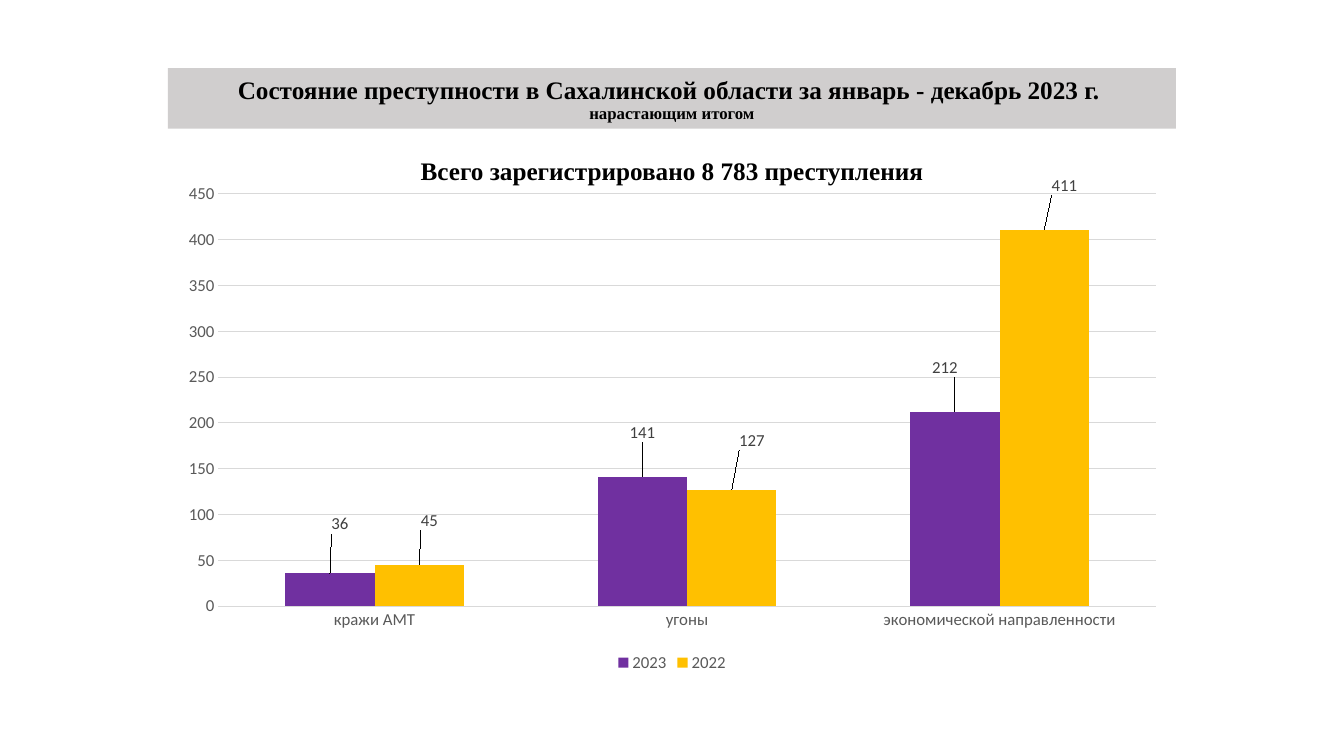
import pptx
import pptx.util
import pptx.chart.data
import pptx.dml.color
import pptx.enum.chart
import pptx.enum.text
import pptx.oxml
import pptx.oxml.ns

Pt = pptx.util.Pt
RGB = pptx.dml.color.RGBColor
BLACK = RGB(0, 0, 0)
BAND = RGB(0xD0, 0xCE, 0xCE)
GRID = RGB(0xD9, 0xD9, 0xD9)
GREY = RGB(0x59, 0x59, 0x59)
DARK = RGB(0x40, 0x40, 0x40)
PURPLE = RGB(0x70, 0x30, 0xA0)
GOLD = RGB(0xFF, 0xC0, 0x00)

WIDE, HIGH = pptx.util.Inches(13.33), pptx.util.Inches(7.5)
LEFT, SPAN = WIDE // 8, WIDE * 3 // 4

CATS = ["кражи АМТ", "угоны", "экономической направленности"]
# Name, colour, values, label shifts as shares of the chart
SERIES = [
    ("2023", PURPLE, (36, 141, 212),
     ((0.01, -0.07), (0, -0.06), (-0.01, -0.06))),
    ("2022", GOLD, (45, 127, 411),
     ((0.01, -0.06), (0.02, -0.07), (0.02, -0.06))),
]


def style(font, name, size, color, bold=False):
    font.name, font.size, font.bold = name, Pt(size), bold
    font.color.rgb = color


def layout(**parts):
    """Make a manual chart layout from its named parts."""
    tags = "".join(f'<c:{k} val="{v}"/>' for k, v in parts.items())
    space = pptx.oxml.ns.nsdecls("c")
    return pptx.oxml.parse_xml(
        f"<c:layout {space}><c:manualLayout>{tags}</c:manualLayout></c:layout>")


def fill_text(shape, box, text, sizes, gap):
    """Place a heading and format one run for each size."""
    shape.left, shape.top, shape.width, shape.height = box
    frame = shape.text_frame
    frame.text = text
    frame.word_wrap = True
    frame.auto_size = pptx.enum.text.MSO_AUTO_SIZE.NONE
    para = frame.paragraphs[0]
    para.alignment = pptx.enum.text.PP_ALIGN.CENTER
    para.line_spacing = gap
    for run, size in zip(para.runs, sizes):
        style(run.font, "Times New Roman", size, BLACK, True)
    return para


def add_title(slide, box):
    shape = slide.shapes.title
    fill_text(shape, box,
              "Состояние преступности в Сахалинской области за январь - "
              "декабрь 2023 г. \vнарастающим итогом", (18, 12), 0.9)
    shape.text_frame.vertical_anchor = pptx.enum.text.MSO_ANCHOR.BOTTOM
    shape.fill.solid()
    shape.fill.fore_color.rgb = BAND


def add_total(slide, box):
    shape = slide.placeholders[1]
    para = fill_text(shape, box,
                     "Всего зарегистрировано 8 783 преступления", (18,), 0.8)
    para.space_before = Pt(10)
    shape.text_frame.vertical_anchor = pptx.enum.text.MSO_ANCHOR.TOP


def add_bars(slide, box):
    data = pptx.chart.data.CategoryChartData()
    data.categories = CATS
    for name, _, vals, _ in SERIES:
        data.add_series(name, vals)
    kinds = pptx.enum.chart
    chart = slide.shapes.add_chart(
        kinds.XL_CHART_TYPE.COLUMN_CLUSTERED, *box, data).chart
    chart.has_title = False
    style(chart.font, "Calibri", 10, BLACK)

    # Legend
    chart.has_legend = True
    chart.legend.position = kinds.XL_LEGEND_POSITION.BOTTOM
    chart.legend.include_in_layout = False
    style(chart.legend.font, "Calibri", 12, GREY)

    # Axes
    for axis in (chart.category_axis, chart.value_axis):
        axis.major_tick_mark = kinds.XL_TICK_MARK.NONE
        axis.minor_tick_mark = kinds.XL_TICK_MARK.NONE
        axis.format.line.fill.background()
        style(axis.tick_labels.font, "Calibri", 12, GREY)
    scale = chart.value_axis
    scale.minimum_scale, scale.maximum_scale, scale.major_unit = 0, 450, 50
    scale.has_major_gridlines = True
    line = scale.major_gridlines.format.line
    line.color.rgb, line.width = GRID, Pt(0.75)

    # Bars and their labels
    plot = chart.plots[0]
    plot.gap_width, plot.overlap, plot.vary_by_categories = 150, 0, False
    for bars, (_, color, _, shifts) in zip(plot.series, SERIES):
        bars.format.fill.solid()
        bars.format.fill.fore_color.rgb = color
        bars.data_labels.show_value = True
        style(bars.data_labels.font, "Calibri", 12, DARK)
        for i, _ in enumerate(shifts):
            label = bars.points[i].data_label
            style(label.font, "Calibri", 12, DARK)
            label.position = kinds.XL_LABEL_POSITION.OUTSIDE_END

    # Manual places of the labels and the plot
    root = chart.element if hasattr(chart, "element") else chart._chartSpace
    moves = [shift for row in SERIES for shift in row[3]]
    for tag, (x, y) in zip(root.xpath(".//c:dLbl"), moves):
        tag.insert(1, layout(x=x, y=y))
    area = root.xpath(".//c:plotArea")[0]
    for old in area.xpath("./c:layout"):
        area.remove(old)
    area.insert(0, layout(layoutTarget="inner", xMode="edge", yMode="edge",
                          x=0.05, y=0.04, w=0.93, h=0.82))


def main():
    deck = pptx.Presentation()
    deck.slide_width, deck.slide_height = WIDE, HIGH
    slide = deck.slides.add_slide(deck.slide_layouts[0])

    def row(top, tall):
        return LEFT, int(HIGH * top), SPAN, int(HIGH * tall)

    add_title(slide, row(0.09, 0.08))
    add_total(slide, row(0.207, 0.048))
    add_bars(slide, row(0.23, 0.665))
    deck.save("out.pptx")


if __name__ == "__main__":
    main()
